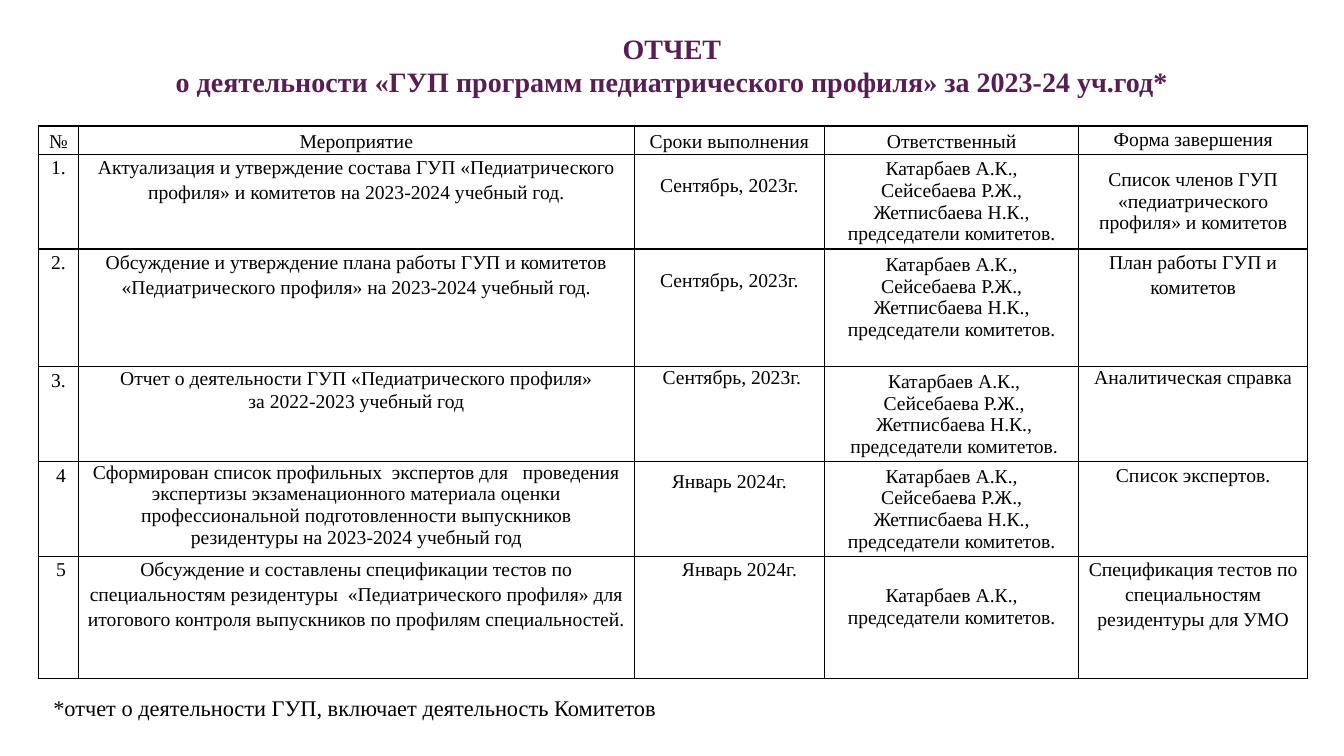
import pptx
import pptx.dml.color
import pptx.enum.text
import pptx.oxml
import pptx.oxml.ns
import pptx.util
from pptx.util import Inches

FONT = "Times New Roman"
BLACK = pptx.dml.color.RGBColor(0x00, 0x00, 0x00)
PURPLE = pptx.dml.color.RGBColor(0x58, 0x1D, 0x53)
CENTER = pptx.enum.text.PP_ALIGN.CENTER
LEFT = pptx.enum.text.PP_ALIGN.LEFT
MIDDLE = pptx.enum.text.MSO_ANCHOR.MIDDLE
TOP = pptx.enum.text.MSO_ANCHOR.TOP

COLUMN_WIDTHS = [0.4, 5.51, 1.89, 2.52, 2.27]
ROW_HEIGHTS = [0.28, 0.94, 1.17, 0.94, 0.94, 1.21]
SIDE_MARGIN = 0.02
LINE_HEIGHT = 0.21

CHAIRS = "председатели комитетов."
LEADER = "Катарбаев А.К.,"
TEAM = [LEADER, "Сейсебаева Р.Ж., Жетписбаева Н.К., " + CHAIRS]


def entry(*lines, spacing=1.0, after=0, anchor=TOP, left=SIDE_MARGIN,
          right=SIDE_MARGIN, top=0, bottom=0):
    """Describe the text and layout of one table cell; margins are in inches."""
    return dict(lines=lines, spacing=spacing, after=after, anchor=anchor,
                margins=(left, top, right, bottom))


def loose(text, **layout):
    """Describe a cell with open line spacing."""
    return entry(text, spacing=1.15, after=10, **layout)


REPORT = [
    [loose(heading, anchor=MIDDLE) for heading in
     ("№", "Мероприятие", "Сроки выполнения", "Ответственный")]
    + [loose("Форма завершения")],
    [loose("1."),
     loose("Актуализация и утверждение состава ГУП «Педиатрического профиля» "
           "и комитетов на 2023-2024 учебный год."),
     entry("Сентябрь, 2023г.", top=LINE_HEIGHT),
     entry(*TEAM, anchor=MIDDLE),
     entry("Список членов ГУП «педиатрического профиля» и комитетов", anchor=MIDDLE)],
    [loose("2."),
     loose("Обсуждение и утверждение плана работы ГУП и комитетов "
           "«Педиатрического профиля» на 2023-2024 учебный год."),
     entry("Сентябрь, 2023г.", top=LINE_HEIGHT),
     entry(*TEAM, anchor=MIDDLE, bottom=LINE_HEIGHT),
     loose("План работы ГУП и комитетов")],
    [loose("3."),
     entry("Отчет о деятельности ГУП «Педиатрического профиля»",
           "за 2022-2023 учебный год", spacing=1.07),
     entry("Сентябрь, 2023г.", left=0.07),
     entry(*TEAM, anchor=MIDDLE, left=0.07),
     entry("Аналитическая справка")],
    [loose("4", left=0.07),
     entry("Сформирован список профильных  экспертов для   проведения экспертизы "
           "экзаменационного материала оценки профессиональной подготовленности "
           "выпускников резидентуры на 2023-2024 учебный год", left=0.07, right=0.07),
     entry("Январь 2024г.", spacing=pptx.util.Pt(11.1), left=0.07, right=0.07, top=0.15),
     entry(*TEAM, anchor=MIDDLE),
     loose("Список экспертов.")],
    [loose("5", left=0.07),
     loose("Обсуждение и составлены спецификации тестов по специальностям "
           "резидентуры  «Педиатрического профиля» для итогового контроля "
           "выпускников по профилям специальностей."),
     loose("Январь 2024г.", left=0.22),
     entry(LEADER, CHAIRS, anchor=MIDDLE, bottom=LINE_HEIGHT),
     loose("Спецификация тестов по специальностям резидентуры для УМО")],
]


def write_lines(frame, lines, size, color=BLACK, bold=False, align=CENTER,
                spacing=None, after=None):
    for index, line in enumerate(lines):
        paragraph = frame.add_paragraph() if index else frame.paragraphs[0]
        paragraph.text = line
        paragraph.alignment = align
        paragraph.line_spacing = spacing
        if after is not None:
            paragraph.space_after = pptx.util.Pt(after)
        paragraph.font.name = FONT
        paragraph.font.size = pptx.util.Pt(size)
        paragraph.font.bold = bold
        paragraph.font.color.rgb = color


def add_text(slide, box, lines, size, wrap=True, **style):
    shape = slide.shapes.add_textbox(*map(Inches, box))
    frame = shape.text_frame
    frame.word_wrap = wrap
    frame.auto_size = pptx.enum.text.MSO_AUTO_SIZE.SHAPE_TO_FIT_TEXT
    write_lines(frame, lines, size, **style)


def draw_borders(cell):
    properties = cell._tc.get_or_add_tcPr()
    for index, side in enumerate(("lnL", "lnR", "lnT", "lnB")):
        properties.insert(index, pptx.oxml.parse_xml(
            f'<a:{side} {pptx.oxml.ns.nsdecls("a")} w="{pptx.util.Pt(1)}">'
            f'<a:solidFill><a:srgbClr val="{BLACK}"/></a:solidFill></a:{side}>'))


def fill_cell(cell, content):
    left, top, right, bottom = map(Inches, content["margins"])
    cell.margin_left, cell.margin_top = left, top
    cell.margin_right, cell.margin_bottom = right, bottom
    cell.vertical_anchor = content["anchor"]
    cell.fill.background()
    draw_borders(cell)
    write_lines(cell.text_frame, content["lines"], 14,
                spacing=content["spacing"], after=content["after"])


def add_report_table(slide):
    table = slide.shapes.add_table(
        len(ROW_HEIGHTS), len(COLUMN_WIDTHS), Inches(0.38), Inches(1.25),
        Inches(sum(COLUMN_WIDTHS)), Inches(sum(ROW_HEIGHTS))).table
    table.first_row = False
    table.horz_banding = False
    for column, width in zip(table.columns, COLUMN_WIDTHS):
        column.width = Inches(width)
    for row, height, contents in zip(table.rows, ROW_HEIGHTS, REPORT):
        row.height = Inches(height)
        for cell, content in zip(row.cells, contents):
            fill_cell(cell, content)


def main():
    presentation = pptx.Presentation()
    presentation.slide_width = Inches(13.33)
    presentation.slide_height = Inches(7.5)
    slide = presentation.slides.add_slide(presentation.slide_layouts[6])
    add_text(slide, (0, 0.26, 13.33, 0.77),
             ["ОТЧЕТ", "о деятельности «ГУП программ педиатрического профиля» "
              "за 2023-24 уч.год*"], 20, color=PURPLE, bold=True)
    add_report_table(slide)
    add_text(slide, (0.43, 6.84, 6.22, 0.37),
             ["*отчет о деятельности ГУП, включает деятельность Комитетов"], 16,
             wrap=False, align=LEFT)
    presentation.save("out.pptx")


if __name__ == "__main__":
    main()
